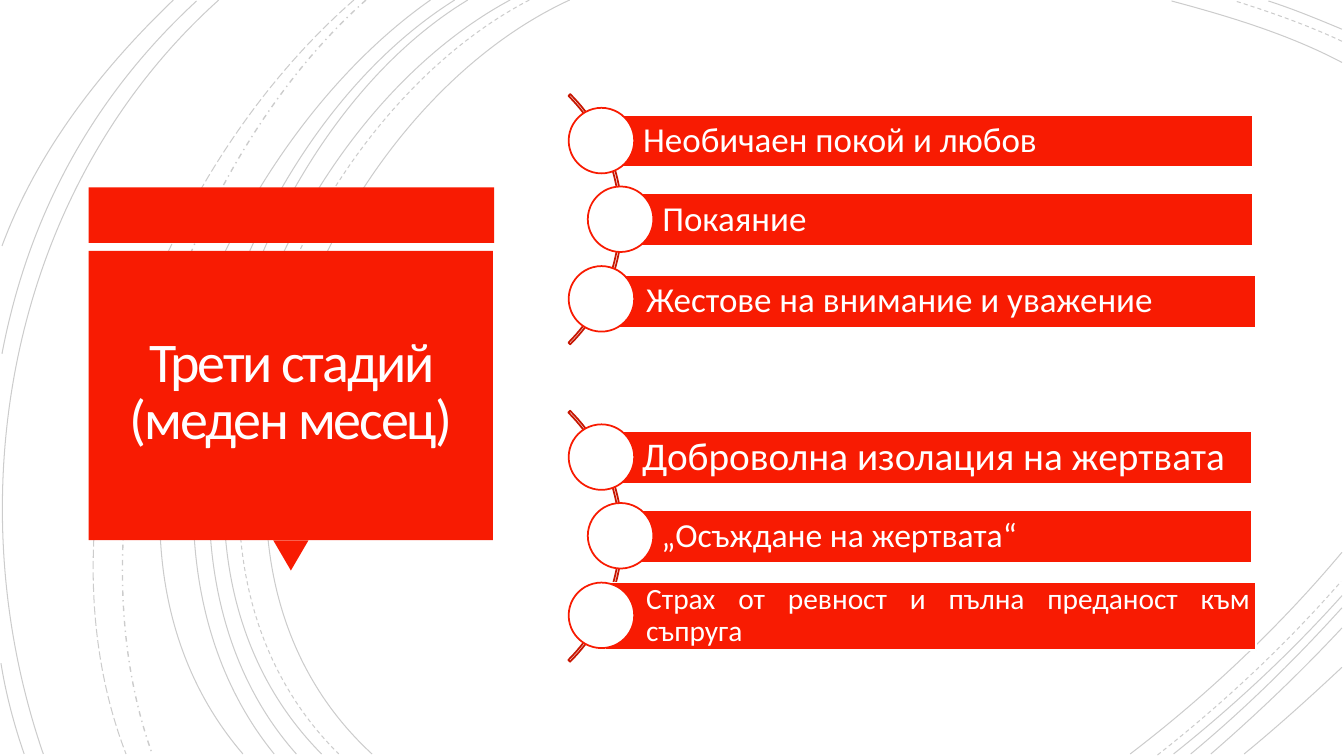
from lxml.etree import SubElement
from pptx import Presentation
from pptx.dml.color import RGBColor
from pptx.enum.dml import MSO_LINE
from pptx.enum.shapes import MSO_SHAPE
from pptx.enum.text import MSO_ANCHOR, MSO_AUTO_SIZE, PP_ALIGN
from pptx.oxml.ns import qn
from pptx.util import Pt

PX = 9144  # 100 px to the inch
HEX = {"red": "F81B02", "dark": "C71602", "white": "FFFFFF",
       "title": "FFFEFF", "black": "000000"}
COLOR = {name: RGBColor.from_string(code) for name, code in HEX.items()}

deck = Presentation()
deck.slide_width, deck.slide_height = 1333 * PX, 750 * PX
slide = deck.slides.add_slide(deck.slide_layouts[5])
shapes = slide.shapes


def add_part(kind, box, fill=None, line=None):
    part = shapes.add_shape(kind, *[n * PX for n in box])
    part.shadow.inherit = False
    if fill:
        part.fill.solid()
        part.fill.fore_color.rgb = COLOR[fill]
    else:
        part.fill.background()
    if line:
        part.line.color.rgb = COLOR[line]
        part.line.width = Pt(1.25)
    else:
        part.line.fill.background()
    return part


def add_text(part, words, size, color, align, insets):
    frame = part.text_frame
    frame.word_wrap = True
    frame.auto_size = MSO_AUTO_SIZE.NONE
    frame.vertical_anchor = MSO_ANCHOR.MIDDLE
    left, rest = insets
    frame.margin_left = left * PX
    frame.margin_top = frame.margin_right = frame.margin_bottom = rest * PX
    para = frame.paragraphs[0]
    para.alignment = align
    para.line_spacing = 0.9
    run = para.add_run()
    run.text = words
    run.font.name = "Calibri"
    run.font.size = Pt(size)
    run.font.color.rgb = COLOR[color]
    return para, run


# Background arcs: start, two control points, end
SOLID, DASH = MSO_LINE.SOLID, MSO_LINE.DASH
arcs = [
    (SOLID, (565, 0), (315, 115), (143, 540), (369, 748)),
    (SOLID, (1331, 62), (1278, 34), (1218, 16), (1162, 1)),
    (SOLID, (1121, 748), (1197, 690), (1269, 622), (1331, 548)),
    (DASH, (525, 0), (285, 125), (123, 537), (336, 748)),
    (DASH, (1331, 41), (1297, 25), (1260, 12), (1225, 1)),
    (DASH, (1148, 749), (1213, 698), (1275, 640), (1330, 577)),
    (SOLID, (506, 0), (270, 127), (110, 537), (319, 748)),
    (SOLID, (1331, 29), (1307, 19), (1283, 9), (1258, 1)),
    (SOLID, (1164, 748), (1223, 701), (1280, 648), (1331, 591)),
    (SOLID, (464, 0), (244, 133), (110, 541), (294, 748)),
    (SOLID, (1181, 748), (1234, 704), (1284, 655), (1331, 603)),
    (SOLID, (451, 0), (231, 138), (97, 533), (272, 748)),
    (SOLID, (1201, 748), (1246, 709), (1290, 667), (1331, 623)),
    (SOLID, (427, 0), (217, 147), (53, 529), (241, 748)),
    (SOLID, (1234, 748), (1267, 721), (1299, 692), (1331, 662)),
    (MSO_LINE.DASH_DOT, (363, 0), (176, 166), (65, 509), (151, 748)),
    (MSO_LINE.LONG_DASH, (351, 0), (157, 169), (29, 499), (125, 748)),
    (SOLID, (217, 0), (11, 185), (-46, 490), (43, 748)),
    (SOLID, (195, 1), (92, 96), (28, 214), (2, 351)),
    (SOLID, (1, 658), (6, 689), (14, 719), (24, 748)),
    (SOLID, (172, 0), (100, 69), (37, 150), (2, 244)),
]
for dash, start, *ends in arcs:
    pen = shapes.build_freeform(*start, scale=PX)
    pen.add_line_segments(ends, close=False)
    arc = pen.convert_to_shape()
    arc.shadow.inherit = False
    arc.fill.background()
    arc.line.color.rgb = COLOR["black"]
    arc.line.width = Pt(1 if dash == MSO_LINE.DASH_DOT else 0.75)
    arc.line.dash_style = dash
    # 20 % opacity, and the three segments become one Bézier curve
    tint = arc.element.xpath(".//a:ln//a:srgbClr")[0]
    SubElement(tint, qn("a:alpha")).set("val", "20000")
    track = arc.element.xpath(".//a:path")[0]
    steps = track.findall(qn("a:lnTo"))
    curve = SubElement(track, qn("a:cubicBezTo"))
    for step in steps:
        curve.append(step[0])
        track.remove(step)

# Title panel
add_part(MSO_SHAPE.RECTANGLE, (88, 186, 402, 55), "red")
tip = add_part(MSO_SHAPE.ISOSCELES_TRIANGLE, (271, 536, 35, 30), "red")
tip.rotation = 180
add_part(MSO_SHAPE.RECTANGLE, (88, 249, 401, 287), "red")

title = shapes.title
title.left, title.top, title.width, title.height = [
    n * PX for n in (97, 256, 383, 270)]
para, run = add_text(title, "Трети стадий (меден месец)", 40, "title",
                     PP_ALIGN.CENTER, (10, 10))
para.line_spacing = 0.85
run.font._element.set("spc", "-150")
title.element.getparent().append(title.element)  # in front of the panel

# Two lists: arc box, first circle top, rows of (bar box, words, size, inset)
LEFT, JUST = PP_ALIGN.LEFT, PP_ALIGN.JUSTIFY
lists = [
    ((266, 42, 351, 351), 107, [
        ((597, 114, 646, 52), "Необичаен покой и любов", 25, 7, LEFT),
        ((616, 192, 627, 52), "Покаяние", 25, 7, LEFT),
        ((600, 273, 646, 52), "Жестове на внимание и уважение", 25, 7, LEFT),
    ]),
    ((265, 356, 352, 352), 421, [
        ((596, 428, 646, 52), "Доброволна изолация на жертвата", 28, 8, LEFT),
        ((615, 506, 627, 52), "„Осъждане на жертвата“", 24, 7, LEFT),
        ((600, 578, 646, 67),
         "Страх от ревност и пълна преданост към съпруга", 21, 6, JUST),
    ]),
]
for bow, top, rows in lists:
    arc = add_part(MSO_SHAPE.BLOCK_ARC, bow, line="dark")
    for i, value in enumerate((189, 27, 0.007)):
        arc.adjustments[i] = value
    for i, (box, words, size, inset, align) in enumerate(rows):
        bar = add_part(MSO_SHAPE.RECTANGLE, box, "red", "white")
        add_text(bar, words, size, "white", align, (41, inset))
        left = 583 if i == 1 else 564
        add_part(MSO_SHAPE.OVAL, (left, top + 157 * i // 2, 65, 65),
                 "white", "red")

deck.save("out.pptx")
